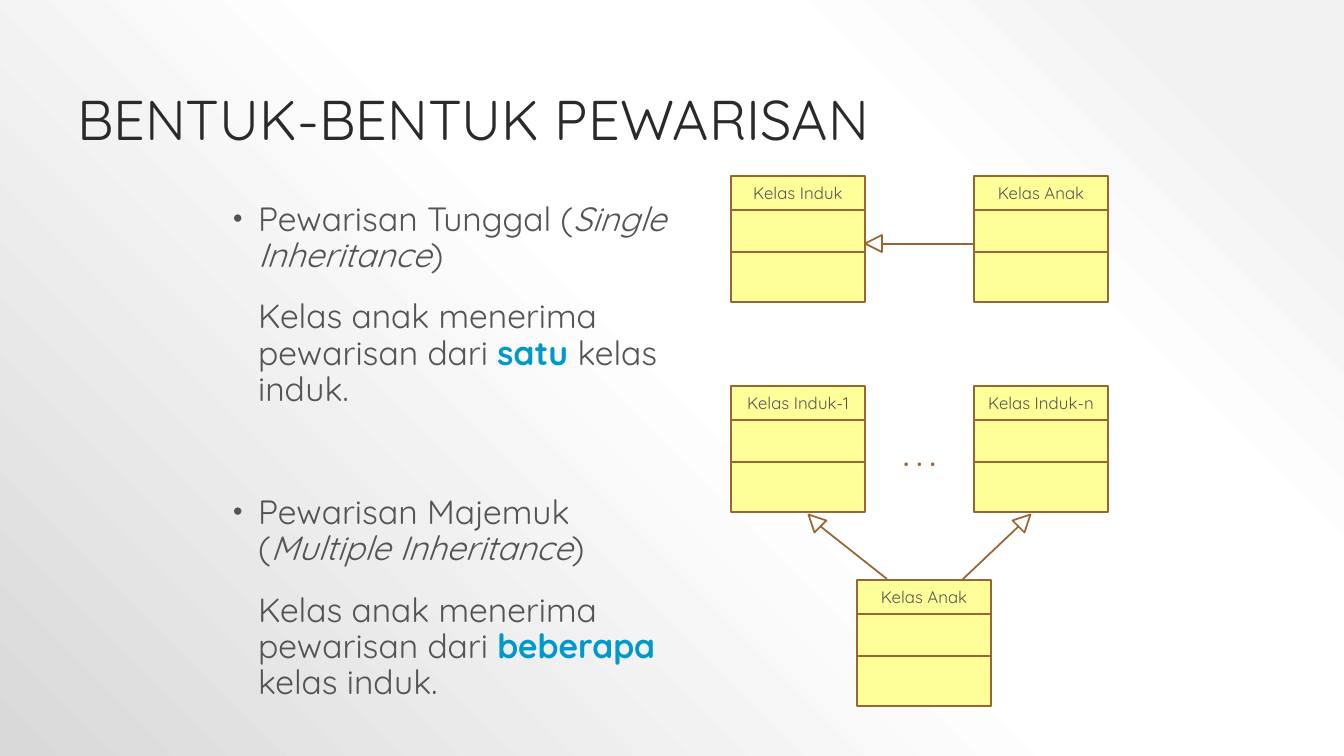
"""Build a slide on single and multiple inheritance with class diagrams."""
import dataclasses

import pptx
import pptx.dml.color
import pptx.enum.shapes
import pptx.enum.text
import pptx.oxml
import pptx.oxml.ns
import pptx.util


@dataclasses.dataclass(frozen=True)
class Theme:
    font: str = "Quicksand"
    title: str = "2A2A2A"
    text: str = "545454"
    accent: str = "0099CC"
    outline: str = "996633"
    class_fill: str = "FFFF99"
    backdrop: tuple = ((10, "F2F2F2"), (28, "FFFFFF"), (48, "FFFFFF"), (100, "D9D9D9"))
    title_size: int = 40
    body_size: int = 24
    dots_size: int = 18
    label_size: int = 12
    line_width: float = 1.25


THEME = Theme()
EMU_PER_PX = 914400 / 100.8
SLIDE_SIZE = (1344, 756)

TITLE = "BENTUK-BENTUK PEWARISAN"
TITLE_BOX = (67, 32, 907, 126)
BODY_BOX = (218, 197, 462, 534)
TEXT_INDENT, BULLET_HANG = 30, 25
PARAGRAPH_GAP, TOPIC_GAP = 18, 62

# (bulleted, space before, spans of (text, style))
BODY = [
    (True, PARAGRAPH_GAP, [("Pewarisan Tunggal (", ""), ("Single Inheritance", "italic"), (")", "")]),
    (False, PARAGRAPH_GAP, [("Kelas anak menerima pewarisan dari ", ""), ("satu ", "strong"), ("kelas induk.", "")]),
    (True, TOPIC_GAP, [("Pewarisan Majemuk (", ""), ("Multiple Inheritance", "italic"), (")", "")]),
    (False, PARAGRAPH_GAP, [("Kelas anak menerima pewarisan dari ", ""), ("beberapa ", "strong"), ("kelas induk.", "")]),
]

CLASS_WIDTH = 134
CLASS_ROWS = (34, 42, 50)
CLASSES = [
    ("Kelas Induk", 731, 176),
    ("Kelas Anak", 974, 176),
    ("Kelas Induk-1", 731, 386),
    ("Kelas Induk-n", 974, 386),
    ("Kelas Anak", 857, 580),
]

HEAD_SIZE = 17
# (head left, head top, head rotation, line start, line end)
ARROWS = [
    (865, 235, 270, (882, 244), (974, 244)),
    (806, 512, 315, (820, 526), (887, 579)),
    (1016, 512, 45, (1019, 526), (962, 580)),
]
DOTS = ". . ."
DOTS_BOX = (873, 436, 93, 40)


def px(*lengths):
    return [pptx.util.Emu(round(length * EMU_PER_PX)) for length in lengths]


def color(value):
    return pptx.dml.color.RGBColor.from_string(value)


def style(span, size, value, bold=False, italic=False):
    span.font.name = THEME.font
    span.font.size = pptx.util.Pt(size)
    span.font.color.rgb = color(value)
    span.font.bold = bold
    span.font.italic = italic


def outline(shape):
    shape.line.color.rgb = color(THEME.outline)
    shape.line.width = pptx.util.Pt(THEME.line_width)


def place(shape, box):
    shape.left, shape.top, shape.width, shape.height = px(*box)


def paint_background(page):
    stops = "".join(
        f'<a:gs pos="{position * 1000}"><a:srgbClr val="{value}"/></a:gs>'
        for position, value in THEME.backdrop
    )
    page._element.cSld.insert(0, pptx.oxml.parse_xml(
        f'<p:bg {pptx.oxml.ns.nsdecls("p", "a")}><p:bgPr><a:gradFill rotWithShape="1">'
        f'<a:gsLst>{stops}</a:gsLst><a:path path="circle">'
        '<a:fillToRect l="100000" t="0" r="0" b="100000"/></a:path>'
        '</a:gradFill><a:effectLst/></p:bgPr></p:bg>'
    ))


def set_bullet(para, bulleted):
    properties = para._p.get_or_add_pPr()
    margin, hang = px(TEXT_INDENT, BULLET_HANG)
    properties.set("marL", str(margin))
    properties.set("indent", str(-hang if bulleted else 0))
    namespace = pptx.oxml.ns.nsdecls("a")
    bullet = [
        f'<a:buClr {namespace}><a:srgbClr val="{THEME.text}"/></a:buClr>',
        f'<a:buSzPct {namespace} val="80000"/>',
        f'<a:buFont {namespace} typeface="Arial"/>',
        f'<a:buChar {namespace} char="•"/>',
    ]
    for markup in bullet if bulleted else [f"<a:buNone {namespace}/>"]:
        properties.append(pptx.oxml.parse_xml(markup))


def add_title(page):
    title = page.shapes.title
    place(title, TITLE_BOX)
    frame = title.text_frame
    frame.text = TITLE
    frame.auto_size = pptx.enum.text.MSO_AUTO_SIZE.NONE
    frame.vertical_anchor = pptx.enum.text.MSO_ANCHOR.BOTTOM
    para = frame.paragraphs[0]
    para.alignment = pptx.enum.text.PP_ALIGN.LEFT
    para.line_spacing = 0.9
    style(para.runs[0], THEME.title_size, THEME.title)


def add_body(page):
    body = page.placeholders[1]
    place(body, BODY_BOX)
    frame = body.text_frame
    frame.auto_size = pptx.enum.text.MSO_AUTO_SIZE.NONE
    for index, (bulleted, gap, spans) in enumerate(BODY):
        para = frame.add_paragraph() if index else frame.paragraphs[0]
        para.line_spacing = 0.9
        para.space_before = pptx.util.Pt(gap)
        set_bullet(para, bulleted)
        for text, kind in spans:
            span = para.add_run()
            span.text = text
            strong = kind == "strong"
            style(span, THEME.body_size, THEME.accent if strong else THEME.text, strong, kind == "italic")


def add_label(frame, text, size, value, bold=False):
    frame.text = text
    para = frame.paragraphs[0]
    para.alignment = pptx.enum.text.PP_ALIGN.CENTER
    style(para.runs[0], size, value, bold)


def add_class(page, name, left, top):
    for index, height in enumerate(CLASS_ROWS):
        row = page.shapes.add_shape(
            pptx.enum.shapes.MSO_SHAPE.RECTANGLE, *px(left, top, CLASS_WIDTH, height))
        row.shadow.inherit = False
        row.fill.solid()
        row.fill.fore_color.rgb = color(THEME.class_fill)
        outline(row)
        if index == 0:
            row.text_frame.word_wrap = False
            row.text_frame.vertical_anchor = pptx.enum.text.MSO_ANCHOR.MIDDLE
            add_label(row.text_frame, name, THEME.label_size, THEME.text)
        top += height


def add_arrow(page, left, top, rotation, start, end):
    head = page.shapes.add_shape(
        pptx.enum.shapes.MSO_SHAPE.ISOSCELES_TRIANGLE, *px(left, top, HEAD_SIZE, HEAD_SIZE))
    head.rotation = rotation
    head.shadow.inherit = False
    head.fill.background()
    outline(head)
    line = page.shapes.add_connector(
        pptx.enum.shapes.MSO_CONNECTOR.STRAIGHT, *px(*start, *end))
    outline(line)
    line._element.spPr.append(
        pptx.oxml.parse_xml(f'<a:effectLst {pptx.oxml.ns.nsdecls("a")}/>'))


def main():
    deck = pptx.Presentation()
    deck.slide_width, deck.slide_height = px(*SLIDE_SIZE)
    page = deck.slides.add_slide(deck.slide_layouts[1])
    paint_background(page)
    add_title(page)
    add_body(page)
    for item in CLASSES:
        add_class(page, *item)
    for arrow in ARROWS:
        add_arrow(page, *arrow)
    dots = page.shapes.add_textbox(*px(*DOTS_BOX))
    dots.text_frame.word_wrap = True
    add_label(dots.text_frame, DOTS, THEME.dots_size, THEME.outline, True)
    deck.save("out.pptx")


if __name__ == "__main__":
    main()
